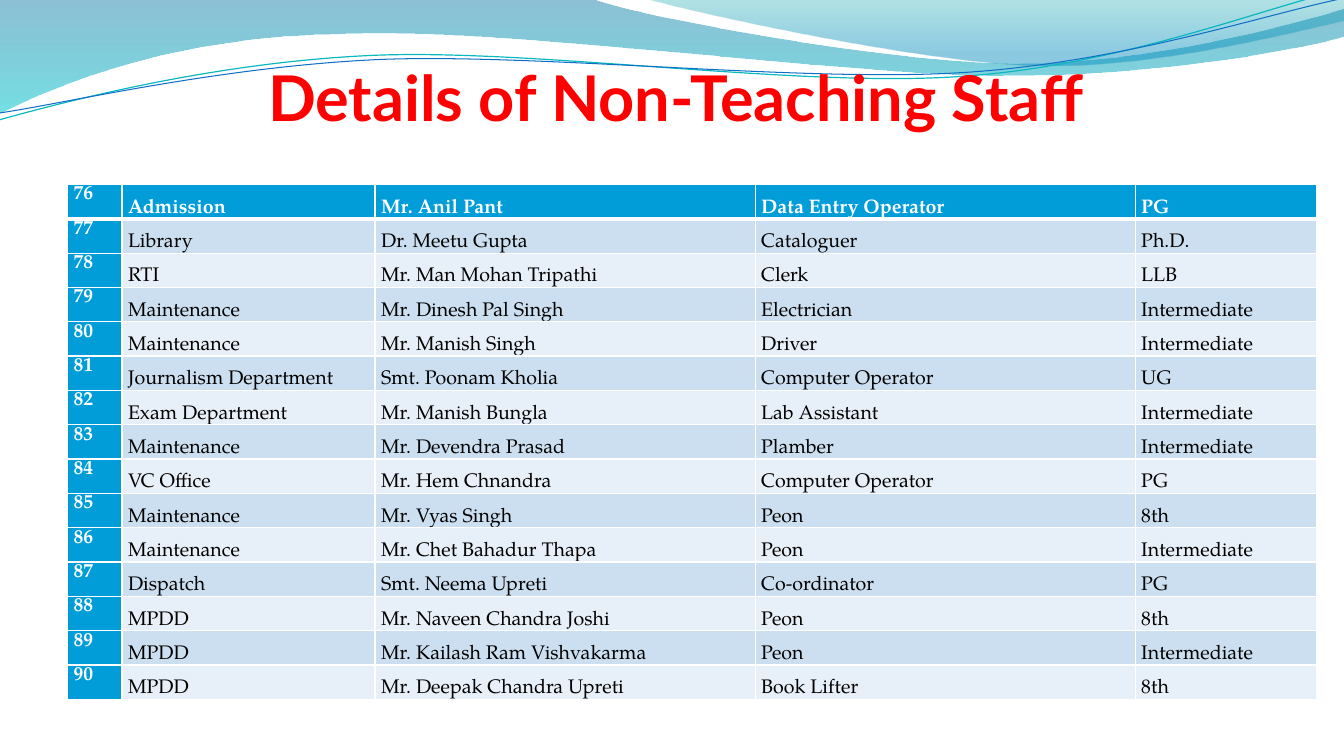
from math import cos, radians, sin
from lxml.etree import SubElement as sub
from pptx import Presentation
from pptx.dml.color import RGBColor as RGB
from pptx.enum.text import MSO_ANCHOR as ANCHOR, MSO_AUTO_SIZE as AUTO, PP_ALIGN as ALIGN
from pptx.oxml.ns import qn
from pptx.util import Inches, Pt

HUES = {
    "title": "FF0000", "head": "009DD9", "odd": "CCDFF1", "even": "E7EFF8",
    "text": "000000", "white": "FFFFFF", "deep": "0074A1", "aqua": "00C6CF",
    "teal": "00A1A9", "sky": "008BBF", "thread": "0AB8BF", "blue": "0F6FC6",
}
WIDE, HIGH = 13.33, 7.5
TILT = 2.7
COLS = [0.54, 2.51, 3.77, 3.77, 1.8]
LEFT, TOP, ROW = 0.67, 1.83, 5.11 / 15
FIRST = 76
STAFF = [
    ("Admission", "Mr. Anil Pant", "Data Entry Operator", "PG"),
    ("Library", "Dr. Meetu Gupta", "Cataloguer", "Ph.D."),
    ("RTI", "Mr. Man Mohan Tripathi", "Clerk", "LLB"),
    ("Maintenance", "Mr. Dinesh Pal Singh", "Electrician", "Intermediate"),
    ("Maintenance", "Mr. Manish Singh", "Driver", "Intermediate"),
    ("Journalism Department", "Smt. Poonam Kholia", "Computer Operator", "UG"),
    ("Exam Department", "Mr. Manish Bungla", "Lab Assistant", "Intermediate"),
    ("Maintenance", "Mr. Devendra Prasad", "Plamber", "Intermediate"),
    ("VC Office", "Mr. Hem Chnandra", "Computer Operator", "PG"),
    ("Maintenance", "Mr. Vyas Singh", "Peon", "8th"),
    ("Maintenance", "Mr. Chet Bahadur Thapa", "Peon", "Intermediate"),
    ("Dispatch", "Smt. Neema Upreti", "Co-ordinator", "PG"),
    ("MPDD", "Mr. Naveen Chandra Joshi", "Peon", "8th"),
    ("MPDD", "Mr. Kailash Ram Vishvakarma", "Peon", "Intermediate"),
    ("MPDD", "Mr. Deepak Chandra Upreti", "Book Lifter", "8th"),
]

# Each wave is a start point, then points (1 pair) and Bezier curves (3 pairs).
BROAD = [
    [(0, 0)], [(5.87, -0.01)], [(6.34, 0.17), (8.85, 0.63), (10.11, 0.63)],
    [(11.38, 0.63), (12.78, 0.26), (13.33, 0.09)], [(13.35, 0.36)],
    [(13.11, 0.44), (11.6, 0.76), (9.94, 0.75)],
    [(8.29, 0.75), (5.09, 0.28), (3.43, 0.34)],
    [(1.72, 0.36), (0.61, 0.83), (-0.01, 1.13)], [(0, 0)],
]
SMALL = [
    [(6.39, -0.01)], [(6.79, 0.11), (9.09, 0.62), (10.25, 0.65)],
    [(11.41, 0.69), (12.82, 0.32), (13.33, 0.21)], [(13.33, 0)], [(6.39, -0.01)],
]
UPPER = [
    [(-0.01, 1.19)], [(0.64, 1.01), (2.11, 0.62), (3.69, 0.55)],
    [(5.27, 0.48), (7.9, 0.87), (9.5, 0.76)],
    [(11.1, 0.66), (12.52, 0.08), (13.31, -0.1)],
]
LOWER = [
    [(0, 1.12)], [(0.63, 1.03), (2.18, 0.66), (3.78, 0.59)],
    [(5.37, 0.53), (7.96, 0.82), (9.55, 0.72)],
    [(11.15, 0.62), (12.55, 0.14), (13.34, -0.02)],
]


def hue(name):
    return RGB.from_string(HUES[name])


def outline(slide, parts, close):
    """Build a freeform through the end points, then bend its curved sides."""
    parts = [[(Inches(x), Inches(y)) for x, y in part] for part in parts]
    ends = [part[-1] for part in parts]
    pen = slide.shapes.build_freeform(*ends[0], scale=1.0)
    pen.add_line_segments(ends[1:], close=close)
    shape = pen.convert_to_shape()
    shape.shadow.inherit = False
    sides = list(shape.element.iter(qn("a:lnTo")))
    for side, part in zip(sides, parts[1:]):
        if len(part) == 3:
            curve = side.makeelement(qn("a:cubicBezTo"))
            for x, y in part:
                sub(curve, qn("a:pt"), x=str(x - shape.left), y=str(y - shape.top))
            side.getparent().replace(side, curve)
    return shape


def wave(slide, parts, stops):
    """Draw a filled wave; stops are (position, colour, opacity percent)."""
    shape = outline(slide, parts, True)
    shape.line.fill.background()
    shape.fill.gradient()
    shape.fill.gradient_angle = 270
    for stop, (place, name, _) in zip(shape.fill.gradient_stops, stops):
        stop.position = place
        stop.color.rgb = hue(name)
    tints = shape.element.spPr.iter(qn("a:srgbClr"))
    for tint, (_, _, solid) in zip(tints, stops):
        sub(tint, qn("a:alpha"), val=str(solid * 1000))


def level(parts, mid):
    """Turn the points clockwise about mid by the tilt."""
    c, s = cos(radians(TILT)), sin(radians(TILT))
    return [
        [(mid[0] + (x - mid[0]) * c - (y - mid[1]) * s,
          mid[1] + (x - mid[0]) * s + (y - mid[1]) * c) for x, y in part]
        for part in parts
    ]


def thread(slide, parts, mid, name, width):
    shape = outline(slide, level(parts, mid), False)
    shape.rotation = 360 - TILT
    shape.fill.background()
    shape.line.color.rgb = hue(name)
    shape.line.width = Pt(width)


def write(para, text, font, size, name, bold):
    run = para.add_run()
    run.text = text
    run.font.name = font
    run.font.size = Pt(size)
    run.font.bold = bold
    run.font.color.rgb = hue(name)


def head(slide, text):
    title = slide.shapes.title
    title.left, title.top = Inches(1.45), Inches(0.78)
    title.width, title.height = Inches(10.5), Inches(0.55)
    frame = title.text_frame
    frame.auto_size = AUTO.NONE
    frame.word_wrap = True
    frame.vertical_anchor = ANCHOR.BOTTOM
    frame.margin_left = frame.margin_right = frame.margin_bottom = 0
    frame.margin_top = Inches(0.05)
    para = frame.paragraphs[0]
    para.alignment = ALIGN.CENTER
    write(para, text, "Lato", 45, "title", True)
    title.element.getparent().append(title.element)


def edge(cell, low):
    """Give a cell white borders, with the bottom one low points wide."""
    props = cell._tc.get_or_add_tcPr()
    for side, width in zip("LRTB", (1, 1, 1, low)):
        line = sub(props, qn(f"a:ln{side}"), w=str(Pt(width)))
        fill = sub(line, qn("a:solidFill"))
        sub(fill, qn("a:srgbClr"), val=HUES["white"])


def fill_cell(cell, text, row, col):
    lead = row == 0 or col == 0
    edge(cell, 1 if row else 3)
    cell.fill.solid()
    cell.fill.fore_color.rgb = hue("head" if lead else "odd" if row % 2 else "even")
    cell.margin_left = cell.margin_right = Inches(0.06)
    cell.margin_top = cell.margin_bottom = 0
    cell.vertical_anchor = ANCHOR.BOTTOM if col else ANCHOR.TOP
    para = cell.text_frame.paragraphs[0]
    para.line_spacing = 1.07
    write(para, text, "TeX Gyre Pagella", 14, "white" if lead else "text", lead)


def roster(slide):
    count = len(STAFF)
    grid = slide.shapes.add_table(
        count, len(COLS), Inches(LEFT), Inches(TOP), Inches(sum(COLS)), Inches(ROW * count)
    ).table
    grid.first_col = True
    for col, width in zip(grid.columns, COLS):
        col.width = Inches(width)
    for row, staff in enumerate(STAFF):
        grid.rows[row].height = Inches(ROW)
        for col, text in enumerate((str(FIRST + row), *staff)):
            fill_cell(grid.cell(row, col), text, row, col)


def main():
    deck = Presentation()
    deck.slide_width, deck.slide_height = Inches(WIDE), Inches(HIGH)
    slide = deck.slides.add_slide(deck.slide_layouts[5])
    slide.background.fill.solid()
    slide.background.fill.fore_color.rgb = hue("white")
    wave(slide, BROAD, [(0, "deep", 45), (1, "aqua", 55)])
    wave(slide, SMALL, [(0, "teal", 30), (0.8, "sky", 45)])
    thread(slide, UPPER, (6.65, 0.57), "thread", 0.85)
    thread(slide, LOWER, (6.67, 0.59), "blue", 0.75)
    head(slide, "Details of Non-Teaching Staff")
    roster(slide)
    deck.save("out.pptx")


if __name__ == "__main__":
    main()
